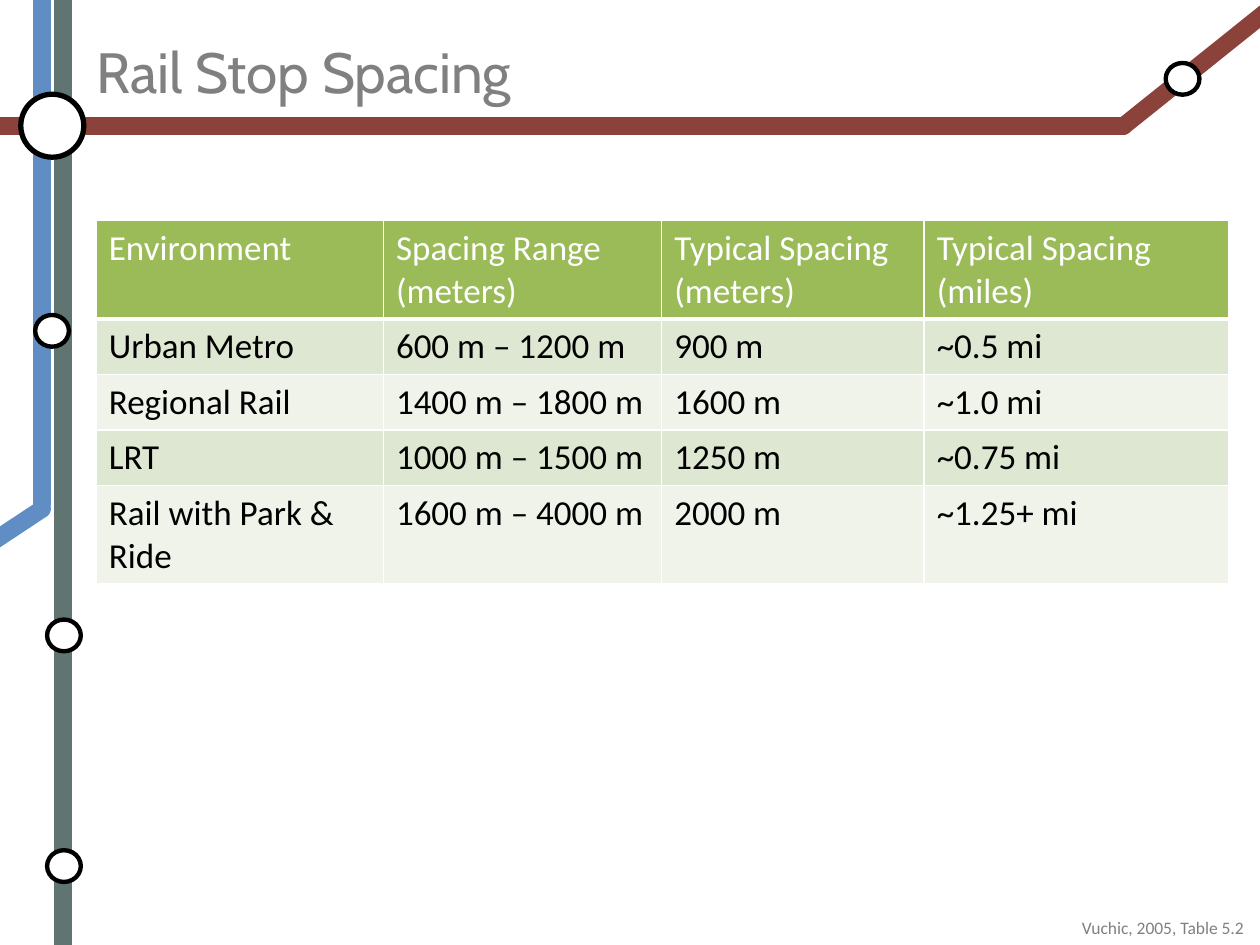
import lxml.etree
import pptx
import pptx.dml.color
import pptx.enum.shapes
import pptx.enum.text
import pptx.oxml.ns
import pptx.util

Cm = pptx.util.Cm
Pt = pptx.util.Pt
RGBColor = pptx.dml.color.RGBColor
qn = pptx.oxml.ns.qn

WHITE = RGBColor(0xFF, 0xFF, 0xFF)
BLACK = RGBColor(0x00, 0x00, 0x00)
GRAY = RGBColor(0x80, 0x80, 0x80)
SLATE = RGBColor(0x60, 0x74, 0x72)
BLUE = RGBColor(0x60, 0x8D, 0xC4)
RED = RGBColor(0x8A, 0x42, 0x3A)
GREEN = RGBColor(0x9B, 0xBB, 0x59)
BAND_FILLS = [RGBColor(0xEF, 0xF3, 0xEA), RGBColor(0xDE, 0xE7, 0xD1)]


def set_text(text_frame, text, **font_format):
    text_frame.text = text
    for paragraph in text_frame.paragraphs:
        for run in paragraph.runs:
            run.font.color.rgb = font_format["color"]
            for name in ("name", "size"):
                setattr(run.font, name, font_format[name])


def add_cell_border(cell, side, width):
    """Draw a white border; side is L, R, T or B, in that order, before the fill."""
    properties = cell._tc.get_or_add_tcPr()
    border = lxml.etree.SubElement(properties, qn(f"a:ln{side}"), w=str(Pt(width)))
    fill = lxml.etree.SubElement(border, qn("a:solidFill"))
    lxml.etree.SubElement(fill, qn("a:srgbClr"), val=str(WHITE))


presentation = pptx.Presentation()
presentation.slide_width = Cm(25.4)
presentation.slide_height = Cm(19.05)
slide = presentation.slides.add_slide(presentation.slide_layouts[6])

# Transit lines: start x, start y, end x, end y, colour
transit_lines = [
    (1.27, 19.05, 1.27, 0, SLATE),
    (0.85, 10.16, 0.85, 0, BLUE),
    (0.85, 10.26, -0.42, 11.1, BLUE),
    (0, 2.54, 22.65, 2.54, RED),
    (25.82, 0, 22.65, 2.54, RED),
]
for *ends, color in transit_lines:
    connector = slide.shapes.add_connector(
        pptx.enum.shapes.MSO_CONNECTOR.STRAIGHT, *[Cm(value) for value in ends])
    connector.line.color.rgb = color
    connector.line.width = Pt(10)
    connector.line._get_or_add_ln().set("cap", "rnd")
    lxml.etree.SubElement(connector._element.spPr, qn("a:effectLst"))

# Stations: left, top, width, height, outline width
stations = [(0.42, 1.9, 1.27, 1.27, 3)]
for left, top in [(0.95, 12.49), (0.95, 17.14), (0.71, 6.35), (23.5, 1.27)]:
    stations.append((left, top, 0.68, 0.64, 2.5))
for *box, outline in stations:
    station = slide.shapes.add_shape(
        pptx.enum.shapes.MSO_SHAPE.OVAL, *[Cm(value) for value in box])
    station.shadow.inherit = False
    station.fill.solid()
    station.fill.fore_color.rgb = WHITE
    station.line.color.rgb = BLACK
    station.line.width = Pt(outline)

# Title and citation
text_boxes = [
    ("Rail Stop Spacing", (1.69, 0.76, 20.96, 1.34),
     {"name": "Cabin", "size": Pt(32.4), "color": GRAY},
     pptx.enum.text.MSO_ANCHOR.MIDDLE, pptx.enum.text.PP_ALIGN.LEFT),
    ("Vuchic, 2005, Table 5.2 ", (4.65, 18.36, 20.75, 0.69),
     {"name": "Calibri", "size": Pt(10), "color": GRAY},
     pptx.enum.text.MSO_ANCHOR.TOP, pptx.enum.text.PP_ALIGN.RIGHT),
]
for text, box, font_format, anchor, alignment in text_boxes:
    text_frame = slide.shapes.add_textbox(*[Cm(value) for value in box]).text_frame
    text_frame.word_wrap = True
    text_frame.vertical_anchor = anchor
    set_text(text_frame, text, **font_format)
    text_frame.paragraphs[0].alignment = alignment

# Spacing table
spacing_rows = [
    ["Environment", "Spacing Range\n(meters)", "Typical Spacing (meters)",
     "Typical Spacing (miles)"],
    ["Urban Metro", "600 m – 1200 m", "900 m", "~0.5 mi"],
    ["Regional Rail", "1400 m – 1800 m", "1600 m", "~1.0 mi"],
    ["LRT", "1000 m – 1500 m", "1250 m", "~0.75 mi"],
    ["Rail with Park & Ride", "1600 m – 4000 m", "2000 m", "~1.25+ mi"],
]
column_widths = [5.79, 5.61, 5.29, 6.15]
row_heights = [1.98, 1.12, 1.12, 1.12, 1.98]
table = slide.shapes.add_table(
    len(spacing_rows), len(column_widths), Cm(1.94), Cm(4.45),
    Cm(sum(column_widths)), Cm(sum(row_heights))).table
for column, width in zip(table.columns, column_widths):
    column.width = Cm(width)
for row, height in zip(table.rows, row_heights):
    row.height = Cm(height)
for row_index, texts in enumerate(spacing_rows):
    is_header = row_index == 0
    for column_index, text in enumerate(texts):
        cell = table.cell(row_index, column_index)
        set_text(cell.text_frame, text, name="Calibri", size=Pt(20),
                 color=WHITE if is_header else BLACK)
        for paragraph in cell.text_frame.paragraphs:
            for run in paragraph.runs:
                run.font.bold = False
        for side in "LRTB":
            add_cell_border(cell, side, 3 if is_header and side == "B" else 1)
        cell.fill.solid()
        cell.fill.fore_color.rgb = GREEN if is_header else BAND_FILLS[row_index % 2]

presentation.save("out.pptx")
